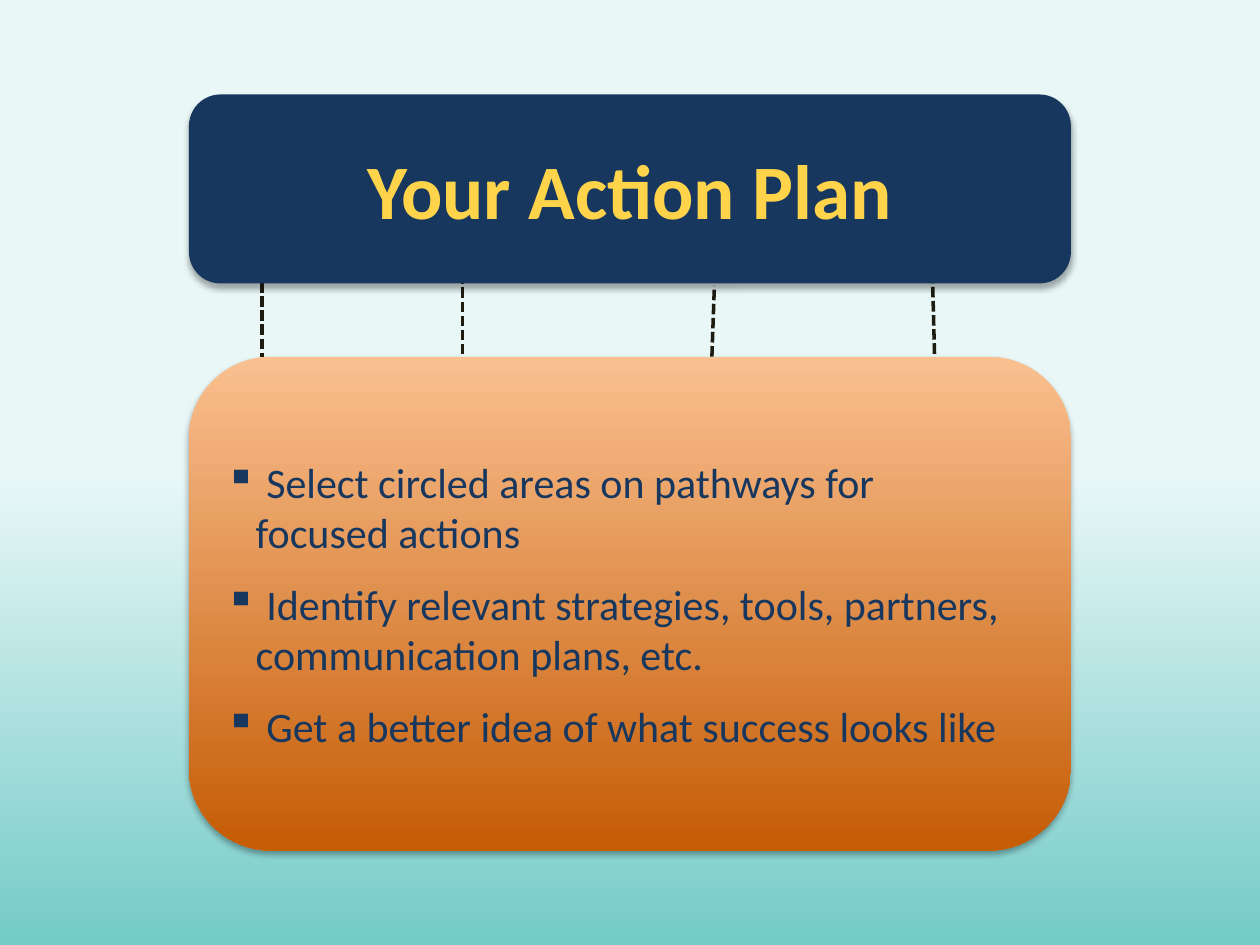
"""Build the "Your Action Plan" slide: a title panel tied to a panel of bullets."""
from lxml.etree import SubElement
from pptx import Presentation
from pptx.dml.color import RGBColor
from pptx.enum.dml import MSO_LINE
from pptx.enum.shapes import MSO_CONNECTOR, MSO_SHAPE
from pptx.enum.text import MSO_ANCHOR, PP_ALIGN
from pptx.oxml.ns import qn
from pptx.util import Inches, Pt

COLORS = {
    "teal": "74CBC8",
    "mist": "E9F7F7",
    "navy": "17375E",
    "yellow": "FFD44B",
    "peach": "FAC090",
    "orange": "E46C0A",
    "line": "1E1C11",
    "shadow": "000000",
}


def rgb(name):
    return RGBColor.from_string(COLORS[name])


def write(shape, paragraphs, size, color, bold=False, align=PP_ALIGN.LEFT,
          space_after=0, bullet=None, indent=0):
    frame = shape.text_frame
    frame.word_wrap = True
    frame.vertical_anchor = MSO_ANCHOR.MIDDLE
    for index, text in enumerate(paragraphs):
        paragraph = frame.add_paragraph() if index else frame.paragraphs[0]
        paragraph.text = text
        paragraph.alignment = align
        paragraph.space_after = Pt(space_after)
        if bullet:
            properties = paragraph._p.get_or_add_pPr()
            properties.set("marL", str(Inches(indent)))
            properties.set("indent", str(-Inches(indent)))
            SubElement(properties, qn("a:buChar"), char=bullet)
        for run in paragraph.runs:
            run.font.name = "Calibri"
            run.font.size = Pt(size)
            run.font.bold = bold
            run.font.color.rgb = rgb(color)


presentation = Presentation()
presentation.slide_width = Inches(10)
presentation.slide_height = Inches(7.5)
slide = presentation.slides.add_slide(presentation.slide_layouts[6])

for x1, y1, x2, y2 in [
    (2.08, 2.24, 2.08, 2.83),
    (3.67, 2.17, 3.67, 2.92),
    (5.65, 2.83, 5.67, 2.27),
    (7.42, 2.92, 7.4, 2.17),
]:
    connector = slide.shapes.add_connector(
        MSO_CONNECTOR.STRAIGHT, Inches(x1), Inches(y1), Inches(x2), Inches(y2))
    connector.line.color.rgb = rgb("line")
    connector.line.width = Pt(2)
    connector.line.dash_style = MSO_LINE.SQUARE_DOT
    SubElement(connector._element.spPr, qn("a:effectLst"))

plan_panel, title_panel = [
    slide.shapes.add_shape(MSO_SHAPE.ROUNDED_RECTANGLE,
                           Inches(1.5), Inches(top), Inches(7), Inches(height))
    for top, height in [(2.83, 3.92), (0.75, 1.5)]
]

title_panel.fill.solid()
title_panel.fill.fore_color.rgb = rgb("navy")

for fill, angle, stops in [
    (slide.background.fill, 90, [(0, "teal"), (0.5, "mist")]),
    (plan_panel.fill, 270, [(0, "peach"), (0.98, "orange")]),
]:
    fill.gradient()
    fill.gradient_angle = angle
    for stop, (position, color) in zip(fill.gradient_stops, stops):
        stop.position = position
        stop.color.rgb = rgb(color)

orange = plan_panel._element.spPr.findall(".//" + qn("a:srgbClr"))[-1]
SubElement(orange, qn("a:shade"), val="73000")

for panel in (plan_panel, title_panel):
    panel.line.fill.background()
    panel.shadow.inherit = False
    effects = panel._element.spPr.find(qn("a:effectLst"))
    shadow = SubElement(effects, qn("a:outerShdw"), blurRad=str(Pt(3.5)),
                        dist=str(Pt(2.2)), dir="5400000", rotWithShape="0")
    shadow_color = SubElement(shadow, qn("a:srgbClr"), val=COLORS["shadow"])
    SubElement(shadow_color, qn("a:alpha"), val="32000")

write(title_panel, ["Your Action Plan"], size=44, color="yellow", bold=True,
      align=PP_ALIGN.CENTER)
write(plan_panel, [
    " Select circled areas on pathways for \vfocused actions",
    " Identify relevant strategies, tools, partners, communication plans, etc.",
    " Get a better idea of what success looks like",
], size=24, color="navy", space_after=12, bullet="▪", indent=0.24)

presentation.save("out.pptx")
